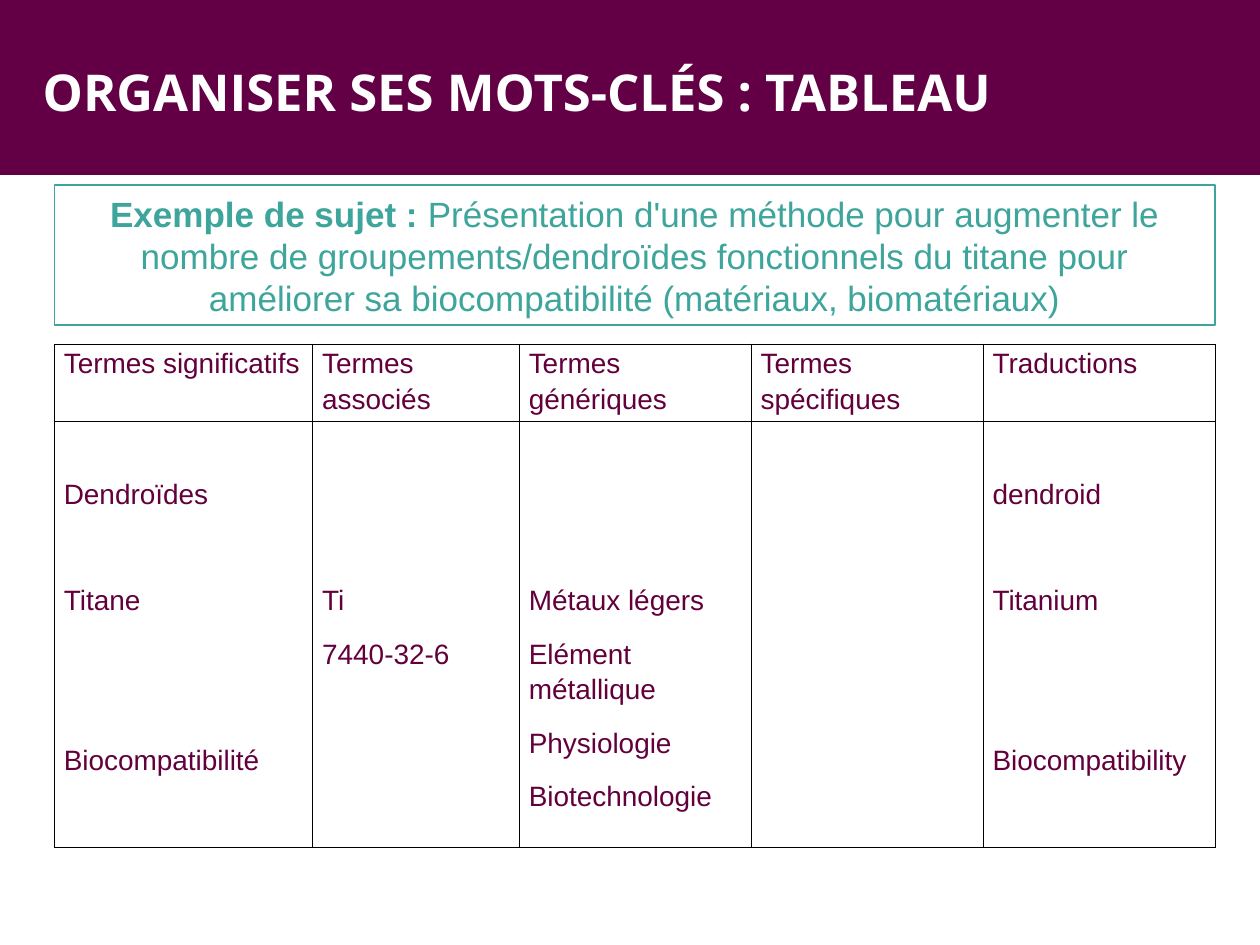
from lxml import etree
from pptx import Presentation
from pptx.dml.color import RGBColor
from pptx.enum import shapes, text
from pptx.oxml.ns import qn
from pptx.util import Pt

PLUM, WINE, TEAL, WHITE, BLACK = "630045", "63003C", "3DA59B", "FFFFFF", "000000"
LINE_STEP = 30.4  # one table line with the space after it

HEADINGS = ["Termes significatifs", "Termes associés", "Termes génériques",
            "Termes spécifiques", "Traductions"]
COLUMN_WIDTHS = [147.6, 118.1, 132.5, 132.5, 132.5]
ROW_HEIGHTS = [44, 243.4]
# Each term with the number of free lines above it
KEYWORDS = [
    [(1, "Dendroïdes"), (1, "Titane"), (2, "Biocompatibilité")],
    [(3, "Ti"), (0, "7440-32-6")],
    [(3, "Métaux légers"), (0, "Elément métallique"), (0, "Physiologie"),
     (0, "Biotechnologie")],
    [],
    [(1, "dendroid"), (1, "Titanium"), (2, "Biocompatibility")],
]


def color(hex_value):
    return RGBColor.from_string(hex_value)


def add_run(paragraph, words, size, hex_value, font="Arial", bold=False):
    run = paragraph.add_run()
    run.text = words
    run.font.name = font
    run.font.size = Pt(size)
    run.font.bold = bold
    run.font.color.rgb = color(hex_value)


def add_panel(slide, box, fill, outline=None):
    panel = slide.shapes.add_shape(shapes.MSO_SHAPE.RECTANGLE, *map(Pt, box))
    panel.shadow.inherit = False
    panel.fill.solid()
    panel.fill.fore_color.rgb = color(fill)
    if outline:
        panel.line.color.rgb = color(outline)
        panel.line.width = Pt(1)
    else:
        panel.line.fill.background()
    return panel


def add_banner(slide, box):
    left, top, width, height = box
    add_panel(slide, box, PLUM)
    title = slide.shapes.add_textbox(Pt(left + 17.3), Pt(top + 35.3), Pt(692), Pt(50))
    title.text_frame.word_wrap = True
    heading = title.text_frame.paragraphs[0]
    heading.line_spacing = 0.9
    add_run(heading, "ORGANISER SES MOTS-CLÉS : TABLEAU", 29, WHITE, "Open Sans", True)


def add_subject(slide, box):
    frame = add_panel(slide, box, WHITE, TEAL).text_frame
    frame.word_wrap = True
    frame.vertical_anchor = text.MSO_ANCHOR.MIDDLE
    subject = frame.paragraphs[0]
    subject.alignment = text.PP_ALIGN.CENTER
    add_run(subject, "Exemple de sujet : ", 20, TEAL, bold=True)
    add_run(subject, "Présentation d'une méthode pour augmenter le nombre de "
            "groupements/dendroïdes fonctionnels du titane pour améliorer sa "
            "biocompatibilité (matériaux, biomatériaux)", 20, TEAL)


def add_borders(cell):
    properties = cell._tc.get_or_add_tcPr()
    for position, side in enumerate(("lnL", "lnR", "lnT", "lnB")):
        border = etree.Element(qn(f"a:{side}"), w=str(Pt(0.75)))
        fill = etree.SubElement(border, qn("a:solidFill"))
        etree.SubElement(fill, qn("a:srgbClr"), val=BLACK)
        properties.insert(position, border)


def fill_cell(cell, terms):
    cell.fill.background()
    add_borders(cell)
    cell.margin_left = cell.margin_right = Pt(5.3)
    cell.margin_top = cell.margin_bottom = 0
    for index, (free_lines, term) in enumerate(terms):
        gap = Pt(free_lines * LINE_STEP)
        if index == 0:
            cell.margin_top = gap
            paragraph = cell.text_frame.paragraphs[0]
        else:
            paragraph = cell.text_frame.add_paragraph()
            paragraph.space_before = gap
        paragraph.line_spacing = 1.15
        paragraph.space_after = Pt(10)
        add_run(paragraph, term, 16, WINE)


def add_keyword_table(slide, box):
    rows = [[[(0, heading)] for heading in HEADINGS], KEYWORDS]
    table = slide.shapes.add_table(len(rows), len(HEADINGS), *map(Pt, box)).table
    table.first_row = table.horz_banding = False
    for column, width in zip(table.columns, COLUMN_WIDTHS):
        column.width = Pt(width)
    for row, height, contents in zip(table.rows, ROW_HEIGHTS, rows):
        row.height = Pt(height)
        for cell, terms in zip(row.cells, contents):
            fill_cell(cell, terms)


def main():
    deck = Presentation()
    deck.slide_width, deck.slide_height = Pt(720), Pt(540)
    slide = deck.slides.add_slide(deck.slide_layouts[6])
    add_banner(slide, (0, 0, 720, 100))
    add_keyword_table(slide, (31.2, 196.6, sum(COLUMN_WIDTHS), sum(ROW_HEIGHTS)))
    add_subject(slide, (31.2, 105.8, sum(COLUMN_WIDTHS), 80))
    deck.save("out.pptx")


if __name__ == "__main__":
    main()
